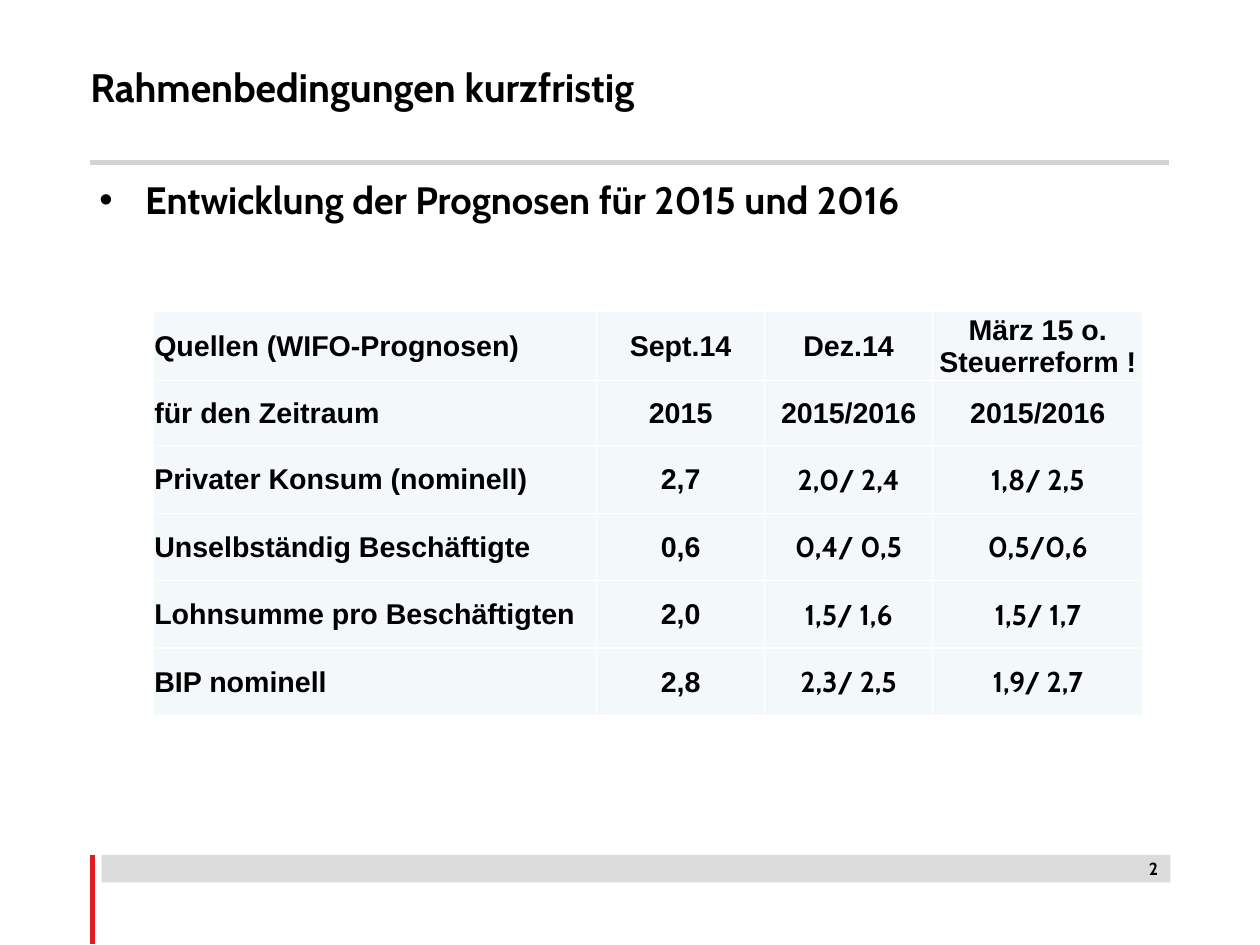
"""Build a slide with a table of short-term economic forecasts."""
import pptx
import pptx.dml.color
import pptx.enum.shapes
import pptx.enum.text
import pptx.oxml.ns
import pptx.util
from lxml import etree

Inches = pptx.util.Inches
Align = pptx.enum.text.PP_ALIGN
MIDDLE = pptx.enum.text.MSO_ANCHOR.MIDDLE
qn = pptx.oxml.ns.qn


def color(hex_string):
    return pptx.dml.color.RGBColor.from_string(hex_string)


def write_text(text_frame, text, size=18, font="Cabin", align=Align.LEFT):
    paragraph = text_frame.paragraphs[0]
    paragraph.alignment = align
    run = paragraph.add_run()
    run.text = text
    run.font.size = pptx.util.Pt(size)
    run.font.name = font
    run.font.bold = True
    run.font.color.rgb = color("000000")
    return paragraph


presentation = pptx.Presentation()
presentation.slide_width = Inches(28 / 2.54)
presentation.slide_height = Inches(21 / 2.54)
slide = presentation.slides.add_slide(presentation.slide_layouts[1])
shapes = slide.shapes

for left, top, right, bottom, line_color in (
    (0.79, 1.42, 10.23, 1.42, "D2D3D4"),
    (0.81, 7.48, 0.81, 8.26, "E11B1E"),
):
    rule = shapes.add_connector(
        pptx.enum.shapes.MSO_CONNECTOR.STRAIGHT,
        Inches(left), Inches(top), Inches(right), Inches(bottom),
    )
    rule.line.color.rgb = color(line_color)
    rule.line.width = pptx.util.Pt(2.84)
    etree.SubElement(rule._element.spPr, qn("a:effectLst"))

footer_bar = shapes.add_shape(
    pptx.enum.shapes.MSO_SHAPE.RECTANGLE,
    Inches(0.89), Inches(7.48), Inches(9.35), Inches(0.24),
)
footer_bar.shadow.inherit = False
footer_bar.line.fill.background()
footer_bar.fill.solid()
footer_bar.fill.fore_color.rgb = color("D2D3D4")
bar_color = footer_bar._element.spPr.find(".//" + qn("a:srgbClr"))
etree.SubElement(bar_color, qn("a:alpha"), val="80000")

page_number = shapes.add_textbox(Inches(9.53), Inches(7.46), Inches(0.7), Inches(0.38))
page_number.text_frame.word_wrap = True
write_text(page_number.text_frame, "2", size=11, align=Align.RIGHT)

title = shapes.title
body = slide.placeholders[1]
for placeholder, left, top, width, height in (
    (title, 0.79, 0.43, 7.28, 0.65),
    (body, 0.87, 1.54, 9.53, 0.47),
):
    placeholder.left, placeholder.top = Inches(left), Inches(top)
    placeholder.width, placeholder.height = Inches(width), Inches(height)
    frame = placeholder.text_frame
    frame.margin_left = frame.margin_right = frame.margin_top = frame.margin_bottom = 0
    frame.word_wrap = True
    frame.auto_size = pptx.enum.text.MSO_AUTO_SIZE.NONE

title.text_frame.vertical_anchor = MIDDLE
write_text(title.text_frame, "Rahmenbedingungen kurzfristig", size=25)

heading = write_text(body.text_frame, "Entwicklung der Prognosen für 2015 und 2016", size=24)
heading.space_before = pptx.util.Pt(0)
properties = heading._p.get_or_add_pPr()
properties.set("marL", str(Inches(0.4)))
properties.set("indent", str(-Inches(0.4)))
etree.SubElement(properties, qn("a:buFont"), typeface="Arial")
etree.SubElement(properties, qn("a:buChar"), char="•")

forecasts = [
    ("Quellen (WIFO-Prognosen)", "Sept.14", "Dez.14", "März 15 o. Steuerreform !"),
    ("für den Zeitraum", "2015", "2015/2016", "2015/2016"),
    ("Privater Konsum (nominell)", "2,7", "2,0/ 2,4", "1,8/ 2,5"),
    ("Unselbständig Beschäftigte", "0,6", "0,4/ 0,5", "0,5/0,6"),
    ("Lohnsumme pro Beschäftigten", "2,0", "1,5/ 1,6", "1,5/ 1,7"),
    ("BIP nominell", "2,8", "2,3/ 2,5", "1,9/ 2,7"),
]
table = shapes.add_table(
    len(forecasts), 4, Inches(1.34), Inches(2.72), Inches(8.66), Inches(3.52)
).table
for column, width in zip(table.columns, (3.88, 1.47, 1.47, 1.84)):
    column.width = Inches(width)

for row_index, values in enumerate(forecasts):
    table.rows[row_index].height = Inches(0.57 if row_index == 1 else 0.59)
    for column_index, value in enumerate(values):
        cell = table.cell(row_index, column_index)
        cell.margin_left = cell.margin_right = cell.margin_top = Inches(0.01)
        cell.margin_bottom = 0
        cell.vertical_anchor = MIDDLE
        write_text(
            cell.text_frame, value,
            font="Cabin" if row_index > 1 and column_index > 1 else "Arial",
            align=Align.CENTER if column_index else Align.LEFT,
        )
        cell_properties = cell._tc.get_or_add_tcPr()
        for side in ("a:lnL", "a:lnR", "a:lnT", "a:lnB"):
            border = etree.SubElement(cell_properties, qn(side), w=str(pptx.util.Pt(1)))
            border_fill = etree.SubElement(border, qn("a:solidFill"))
            etree.SubElement(border_fill, qn("a:srgbClr"), val="FFFFFF")
        cell.fill.solid()
        cell.fill.fore_color.rgb = color("F3F9FA")

presentation.save("out.pptx")
